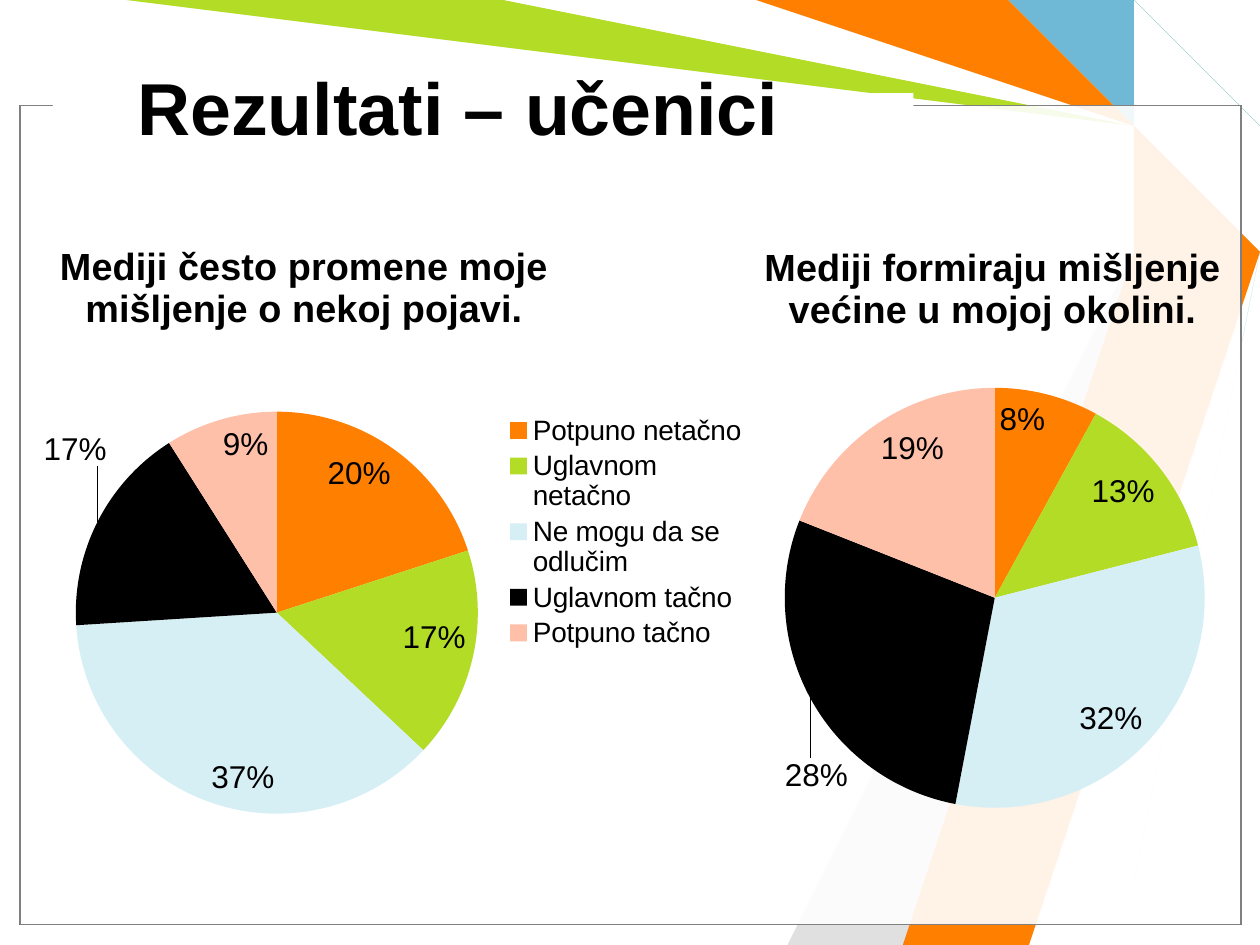
"""Build a results slide with two pie charts over a ribbon backdrop."""
import pptx
import pptx.chart.data
import pptx.dml.color
import pptx.enum.chart
import pptx.enum.text
import pptx.oxml
import pptx.oxml.ns
import pptx.util
from pptx.util import Inches, Pt

FONT = "Arial"
RIBBONS = [
    ("6FB9D7", [(8.92, 0), (9.29, 0.77), (9.58, 1.67), (9.11, 7.49), (8.56, 7.49),
                (9.5, 1.67), (9.17, 0.75), (8.38, 0)]),
    ("B3DC27", [(1.17, 0), (3.83, 0), (9.14, 0.78), (9.42, 1.69), (7.42, 7.5),
                (6.92, 7.5), (9.35, 1.73), (9.01, 0.91)]),
    ("E0E0E0", [(6.67, 7.5), (9.27, 1.81), (6, 7.5)]),
    ("FFFFFF", [(3.75, 0), (9.1, 0.82), (9.32, 1.62), (6.75, 7.5), (7, 7.5),
                (9.41, 1.58), (9.17, 0.75), (6, 0)]),
    ("B4E3EE", [(9.25, 0), (9.17, 0.17), (9.78, 1.2), (10, 1.25), (10, 1),
                (9.25, 0.17), (9.32, 0)]),
    ("189180", [(10, 0.83), (9.42, 0.25), (10, 0.67)]),
    ("FF7F00", [(6.08, 0), (7.92, 0), (9.3, 0.7), (9.66, 1.69), (8.33, 7.5),
                (7.33, 7.5), (9.42, 1.58), (9.17, 0.75)]),
    ("F93D17", [(7.32, 7.5), (9.32, 1.83), (7.49, 7.5)]),
]
PANELS = [
    ((0.16, 0.84, 9.69, 6.5), 69, "000000"),
    ((0.16, 0.84, 9.69, 6.5), 69, "808080"),
    ((0.42, 0.74, 6.83, 0.17), 100, None),
]
ANSWERS = ["Potpuno netačno", "Uglavnom netačno", "Ne mogu da se odlučim",
           "Uglavnom tačno", "Potpuno tačno"]
SLICES = ["FF7F00", "B3DC27", "D6EFF5", "000000", "FFC0AA"]
BLACK_SLICE = 3
CHARTS = [
    dict(title="Mediji često promene moje mišljenje o nekoj pojavi.",
         cats=ANSWERS, vals=[20, 17, 37, 17, 9], box=(0, 1.72, 6.02, 4.95),
         title_at=(0.07, 0.03), pie=(0.1, 0.31, 0.53, 0.65),
         legend=(0.66, 0.31, 0.33, 0.39), label_shift=(-0.08, -0.15)),
    dict(title="Mediji formiraju mišljenje\nvećine u mojoj okolini.",
         cats=["1", "2", "3", "4", "5"], vals=[8, 13, 32, 28, 19],
         box=(4.69, 1.72, 6.41, 4.84), title_at=(0.21, 0.04),
         pie=(0.24, 0.28, 0.52, 0.69), legend=None, label_shift=(-0.04, 0.16)),
]


def rgb(value):
    return pptx.dml.color.RGBColor.from_string(value)


def paint(sp, fill, line=None, alpha=100):
    sp.shadow.inherit = False
    sp.fill.solid()
    sp.fill.fore_color.rgb = rgb(fill)
    if alpha < 100:
        color = sp.element.spPr.find(".//" + pptx.oxml.ns.qn("a:srgbClr"))
        color.append(pptx.oxml.parse_xml(
            f'<a:alpha {pptx.oxml.ns.nsdecls("a")} val="{alpha * 1000}"/>'))
    if line:
        sp.line.color.rgb = rgb(line)
        sp.line.width = Pt(0.75)
    else:
        sp.line.fill.background()


def place(parent, index, values, edge=True, inner=False):
    """Give a chart part a manual layout in fractions of the chart."""
    for old in parent.findall(pptx.oxml.ns.qn("c:layout")):
        parent.remove(old)
    body = '<c:layoutTarget val="inner"/>' if inner else ""
    if edge:
        body += '<c:xMode val="edge"/><c:yMode val="edge"/>'
    body += "".join(f'<c:{n} val="{v}"/>' for n, v in zip("xywh", values))
    parent.insert(index, pptx.oxml.parse_xml(
        f'<c:layout {pptx.oxml.ns.nsdecls("c")}>'
        f"<c:manualLayout>{body}</c:manualLayout></c:layout>"))


def style(font, size, bold=False):
    font.name, font.size, font.bold = FONT, Pt(size), bold
    font.color.rgb = rgb("000000")


def add_pie(s, item):
    data = pptx.chart.data.CategoryChartData()
    data.categories = item["cats"]
    data.add_series(item["title"].replace("\n", " "), item["vals"])
    chart = s.shapes.add_chart(pptx.enum.chart.XL_CHART_TYPE.PIE,
                               *map(Inches, item["box"]), data).chart
    style(chart.font, 18)

    chart.has_title = True
    tf = chart.chart_title.text_frame
    tf.text = item["title"]
    for p in tf.paragraphs:
        style(p.font, 21.6, True)
    place(tf._txBody.getparent().getparent(), 1, item["title_at"])
    place(chart.element.find(".//" + pptx.oxml.ns.qn("c:plotArea")), 0,
          item["pie"], inner=True)

    chart.has_legend = bool(item["legend"])
    if chart.has_legend:
        chart.legend.position = pptx.enum.chart.XL_LEGEND_POSITION.RIGHT
        chart.legend.include_in_layout = False
        style(chart.legend.font, 16)
        place(chart.element.find(".//" + pptx.oxml.ns.qn("c:legend")), 1, item["legend"])

    chart.plots[0].vary_by_categories = True
    series = chart.plots[0].series[0]
    for i, color in enumerate(SLICES):
        fill = series.points[i].format.fill
        fill.solid()
        fill.fore_color.rgb = rgb(color)

    inside = pptx.enum.chart.XL_LABEL_POSITION.INSIDE_END
    labels = series.data_labels
    labels.show_value, labels.show_percentage = False, True
    labels.number_format, labels.number_format_is_linked = "0%", False
    labels.position = inside
    style(labels.font, 18)
    series.points[BLACK_SLICE].data_label.position = inside
    label = chart.element.find(".//" + pptx.oxml.ns.qn("c:dLbl"))
    label.find(pptx.oxml.ns.qn("c:showVal")).set("val", "0")
    label.find(pptx.oxml.ns.qn("c:showPercent")).set("val", "1")
    place(label, 1, item["label_shift"], edge=False)
    group = label.getparent()
    for old in group.findall(pptx.oxml.ns.qn("c:showLeaderLines")):
        group.remove(old)
    group.append(pptx.oxml.parse_xml(
        f'<c:showLeaderLines {pptx.oxml.ns.nsdecls("c")} val="1"/>'))


def main():
    prs = pptx.Presentation()
    prs.slide_width, prs.slide_height = Inches(10), Inches(7.5)
    s = prs.slides.add_slide(prs.slide_layouts[5])
    for color, points in RIBBONS:
        (x, y), *rest = points
        ribbon = s.shapes.build_freeform(x, y, scale=Inches(1))
        ribbon.add_line_segments(rest, close=True)
        paint(ribbon.convert_to_shape(), color)
    for box, alpha, line in PANELS:
        panel = s.shapes.add_shape(1, *map(Inches, box))
        paint(panel, "FFFFFF", line, alpha)

    title = s.shapes.title
    title.left, title.top, title.width, title.height = map(Inches, (0.99, 0.22, 6.89, 1.25))
    s.shapes._spTree.append(title.element)
    tf = title.text_frame
    tf.text = "Rezultati – učenici"
    tf.vertical_anchor = pptx.enum.text.MSO_ANCHOR.MIDDLE
    p = tf.paragraphs[0]
    p.alignment = pptx.enum.text.PP_ALIGN.LEFT
    style(p.font, 42, True)

    for item in CHARTS:
        add_pie(s, item)
    prs.save("out.pptx")


if __name__ == "__main__":
    main()
